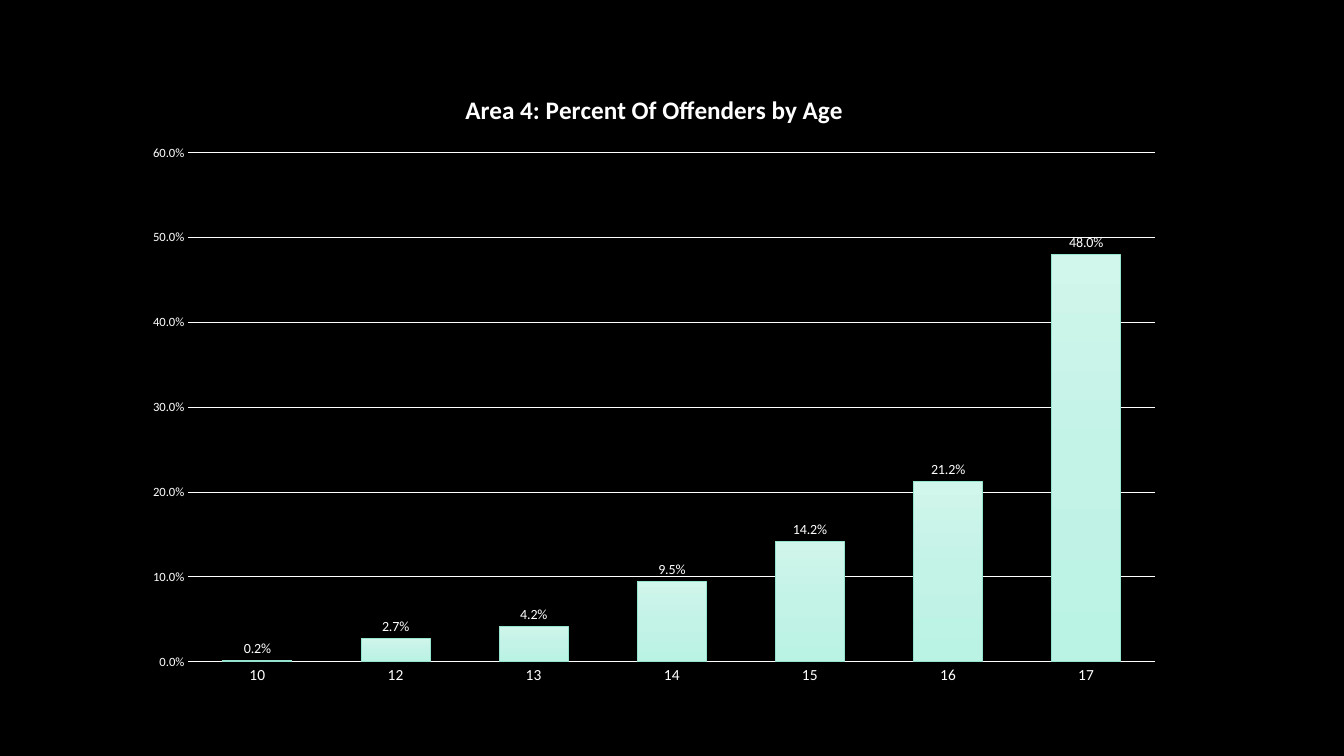
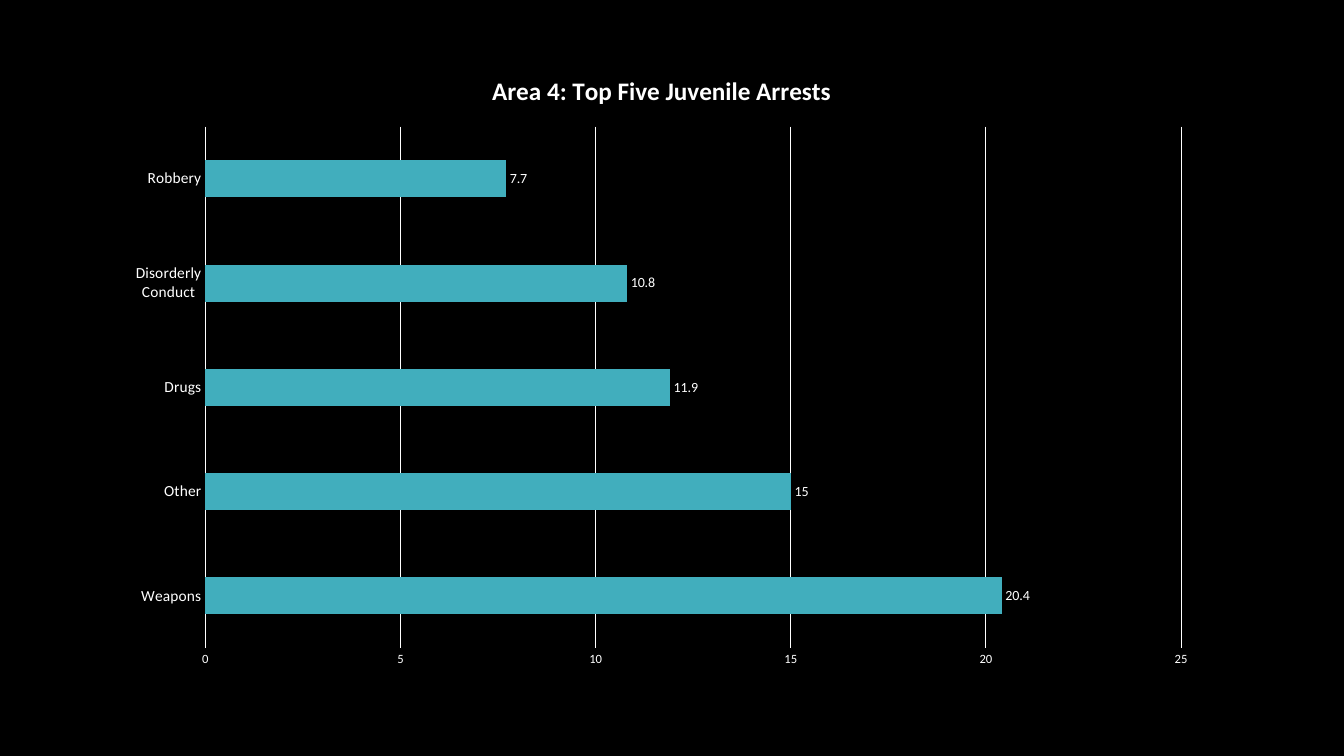
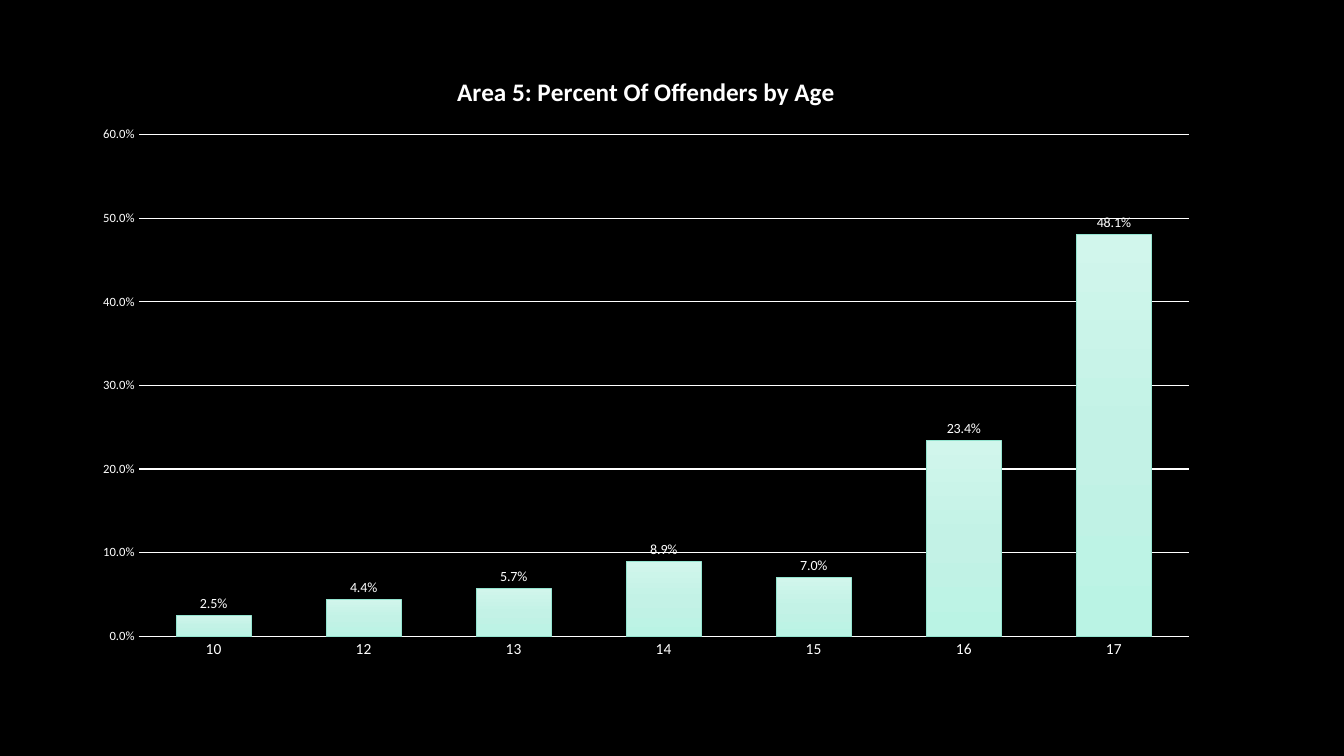
from lxml.etree import SubElement
from pptx import Presentation
from pptx.chart.data import CategoryChartData
from pptx.dml.color import RGBColor
from pptx.enum.chart import XL_CHART_TYPE, XL_LABEL_POSITION, XL_TICK_MARK
from pptx.oxml.ns import qn
from pptx.util import Cm, Pt

COLORS = {
    "background": "000000",
    "text": "FFFFFF",
    "bar": "41AEBD",
    "column_top": "D1F6EC",
    "column_middle": "C3F2E6",
    "column_bottom": "BAF3E4",
    "column_edge": "94E4D0",
}
FONT = "Calibri"
AGES = ["10", "12", "13", "14", "15", "16", "17"]


def color(name):
    return RGBColor.from_string(COLORS[name])


def style_font(font, size, bold=False):
    font.name = FONT
    font.size = Pt(size)
    font.bold = bold
    font.color.rgb = color("text")


def style_line(line, name):
    line.width = Pt(0.75)
    line.color.rgb = color(name)


def add_page(deck):
    page = deck.slides.add_slide(deck.slide_layouts[6])
    page.background.fill.solid()
    page.background.fill.fore_color.rgb = color("background")
    return page


def add_bar_chart(page, box, kind, title, categories, values, number_format, gap):
    """Place a titled one-series chart in box (left, top, width, height in cm)."""
    data = CategoryChartData(number_format=number_format)
    data.categories = categories
    data.add_series("Series 1", values)
    chart = page.shapes.add_chart(kind, *map(Cm, box), data).chart
    style_font(chart.font, 10)
    chart.has_legend = False

    # Title
    chart.has_title = True
    chart.chart_title.include_in_layout = False
    paragraph = chart.chart_title.text_frame.paragraphs[0]
    paragraph.text = title
    style_font(paragraph.runs[0].font, 18, bold=True)

    # Axes
    for axis, size in ((chart.category_axis, 11), (chart.value_axis, 9)):
        axis.major_tick_mark = axis.minor_tick_mark = XL_TICK_MARK.NONE
        style_font(axis.tick_labels.font, size)
    style_line(chart.category_axis.format.line, "text")
    chart.value_axis.format.line.fill.background()
    style_line(chart.value_axis.major_gridlines.format.line, "text")
    chart.value_axis.tick_labels.number_format = number_format
    chart.value_axis.tick_labels.number_format_is_linked = False

    # Bars and their labels
    plot = chart.plots[0]
    plot.vary_by_categories = False
    plot.gap_width = gap
    plot.has_data_labels = True
    labels = plot.data_labels
    labels.show_value = True
    labels.position = XL_LABEL_POSITION.OUTSIDE_END
    labels.number_format = number_format
    labels.number_format_is_linked = False
    style_font(labels.font, 10)
    return plot


def fill_with_gradient(series):
    series.format.fill.gradient()
    series.format.fill.gradient_angle = 270
    stops = series.format.fill.gradient_stops
    # A third stop needs XML
    stop_list = next(series._element.iter(qn("a:gsLst")))
    for stop in list(stop_list):
        stop_list.remove(stop)
    names = ("column_top", "column_middle", "column_bottom")
    for index, name in enumerate(names):
        stop = SubElement(stop_list, qn("a:gs"), pos=str(index * 50000))
        SubElement(stop, qn("a:srgbClr"), val=COLORS[name])


def add_age_slide(deck, box, area, shares):
    plot = add_bar_chart(
        add_page(deck), box, XL_CHART_TYPE.COLUMN_CLUSTERED,
        f"Area {area}: Percent Of Offenders by Age", AGES, shares, "0.0%", 100)
    plot.overlap = -24
    series = plot.series[0]
    fill_with_gradient(series)
    style_line(series.format.line, "column_edge")


def add_arrest_slide(deck, box, area, arrests):
    plot = add_bar_chart(
        add_page(deck), box, XL_CHART_TYPE.BAR_CLUSTERED,
        f"Area {area}: Top Five Juvenile Arrests",
        list(arrests), list(arrests.values()), "General", 182)
    fill = plot.series[0].format.fill
    fill.solid()
    fill.fore_color.rgb = color("bar")


def main():
    deck = Presentation()
    deck.slide_width, deck.slide_height = Cm(33.87), Cm(19.05)
    add_age_slide(deck, (3.33, 1.75, 26.31, 15.82), 4,
                  [0.002, 0.027, 0.042, 0.095, 0.142, 0.212, 0.48])
    add_arrest_slide(deck, (2.87, 1.27, 27.61, 15.85), 4,
                     {"Weapons": 20.4, "Other": 15, "Drugs": 11.9,
                      "Disorderly Conduct": 10.8, "Robbery": 7.7})
    add_age_slide(deck, (2.03, 1.3, 28.5, 15.62), 5,
                  [0.025, 0.044, 0.057, 0.089, 0.07, 0.234, 0.481])
    deck.save("out.pptx")


if __name__ == "__main__":
    main()
